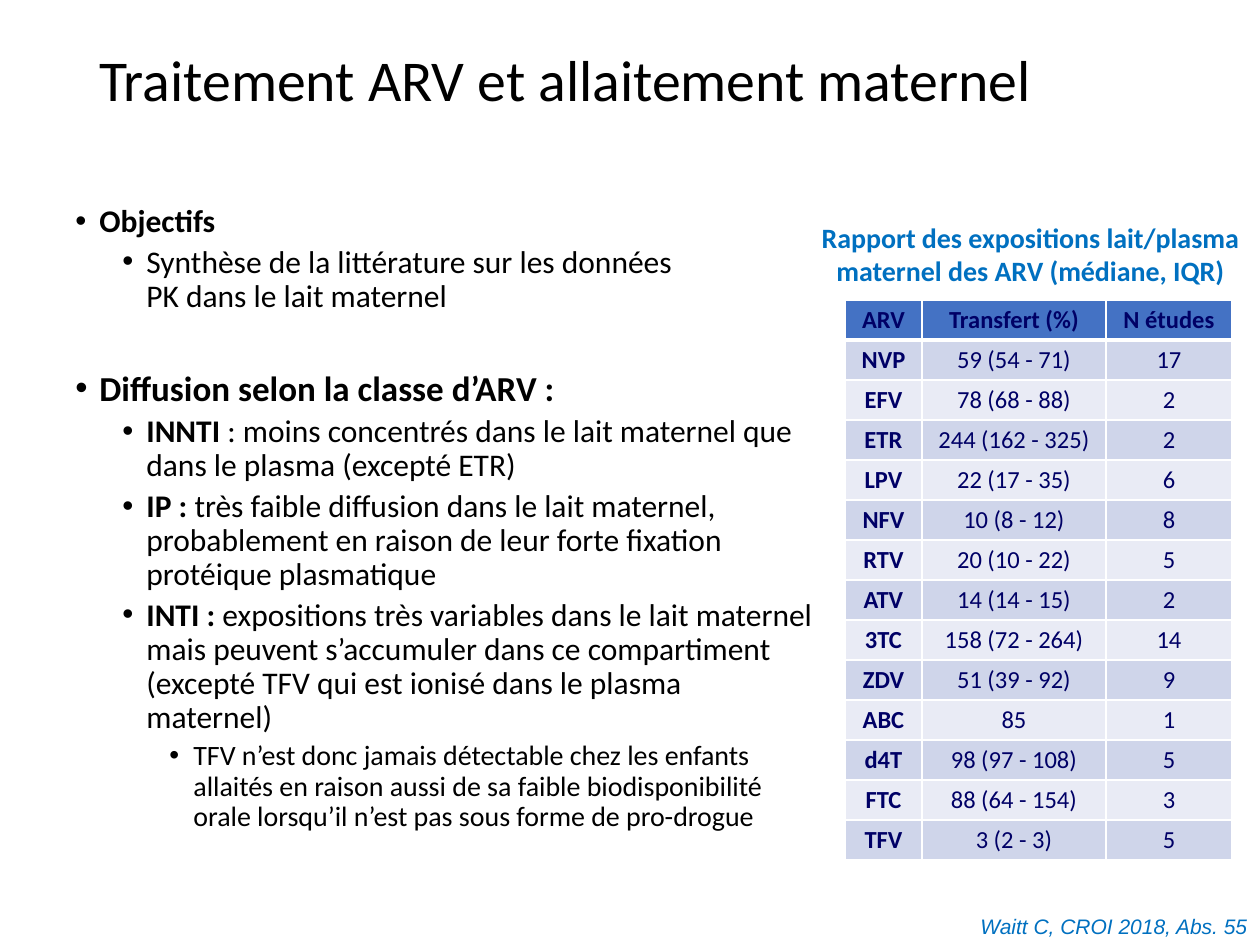
from pptx import Presentation
from pptx.dml.color import RGBColor
from pptx.enum.text import MSO_ANCHOR, PP_ALIGN
from pptx.oxml.ns import qn
from pptx.util import Pt
from lxml.etree import SubElement

BLACK = RGBColor(0x00, 0x00, 0x00)
BLUE = RGBColor(0x00, 0x70, 0xC0)
NAVY = RGBColor(0x00, 0x00, 0x66)
WHITE = RGBColor(0xFF, 0xFF, 0xFF)
HEADER = RGBColor(0x44, 0x72, 0xC4)
BANDS = [RGBColor(0xE9, 0xEB, 0xF5), RGBColor(0xCF, 0xD5, 0xEA)]

TITLE = "Traitement ARV et allaitement maternel"
CAPTION = "Rapport des expositions lait/plasma maternel des ARV (médiane, IQR)"
CREDIT = "Waitt C, CROI 2018, Abs. 55"

# level, size, space before, bold lead, lines
BULLETS = [
    (0, 18, 7.5, "Objectifs", []),
    (1, 18, 3.8, "", ["Synthèse de la littérature sur les données",
                      "PK dans le lait maternel"]),
    (0, 20, 32.6, "Diffusion selon la classe d’ARV :", []),
    (1, 18, 3.8, "INNTI ", [": moins concentrés dans le lait maternel que dans le plasma "
                            "(excepté ETR)"]),
    (1, 18, 3.8, "IP : ", ["très faible diffusion dans le lait maternel, probablement en "
                           "raison de leur forte fixation protéique plasmatique"]),
    (1, 18, 3.8, "INTI : ", ["expositions très variables dans le lait maternel mais peuvent "
                             "s’accumuler dans ce compartiment (excepté TFV qui est ionisé "
                             "dans le plasma maternel)"]),
    (2, 16, 3.8, "", ["TFV n’est donc jamais détectable chez les enfants allaités en raison "
                      "aussi de sa faible biodisponibilité orale lorsqu’il n’est pas sous "
                      "forme de pro-drogue"]),
]

ROWS = [
    ("ARV", "Transfert (%)", "N études"),
    ("NVP", "59 (54 - 71)", "17"),
    ("EFV", "78 (68 - 88)", "2"),
    ("ETR", "244 (162 - 325)", "2"),
    ("LPV", "22 (17 - 35)", "6"),
    ("NFV", "10 (8 - 12)", "8"),
    ("RTV", "20 (10 - 22)", "5"),
    ("ATV", "14 (14 - 15)", "2"),
    ("3TC", "158 (72 - 264)", "14"),
    ("ZDV", "51 (39 - 92)", "9"),
    ("ABC", "85", "1"),
    ("d4T", "98 (97 - 108)", "5"),
    ("FTC", "88 (64 - 154)", "3"),
    ("TFV", "3 (2 - 3)", "5"),
]
COLS = [77, 184, 126]
ROW_H = 40
INDENT, STEP = 24, 47


def px(n):
    return round(n * 914400 / 126)


def style(r, size, color, bold=False, italic=False, font="Calibri"):
    f = r.font
    f.name, f.size, f.bold, f.italic = font, Pt(size), bold, italic
    f.color.rgb = color


def add_box(s, x, y, w, h):
    tf = s.shapes.add_textbox(px(x), px(y), px(w), px(h)).text_frame
    tf.word_wrap = True
    return tf


def add_line(s, box, text, align, *look, **more):
    tf = add_box(s, *box)
    tf.text = text
    p = tf.paragraphs[0]
    p.alignment = align
    style(p.runs[0], *look, **more)
    return tf


def add_bullets(tf):
    for i, (level, size, before, lead, lines) in enumerate(BULLETS):
        p = tf.paragraphs[0] if i == 0 else tf.add_paragraph()
        p.level = level
        p.line_spacing = 0.9
        p.space_before = Pt(before)
        pPr = p._p.get_or_add_pPr()
        pPr.set("marL", str(px(INDENT + STEP * level)))
        pPr.set("indent", str(px(-INDENT)))
        SubElement(pPr, qn("a:buFont"), typeface="Arial")
        SubElement(pPr, qn("a:buChar"), char="•")
        p.text = lead + "\v".join(lines) if not lead else lead
        for r in p.runs:
            style(r, size, BLACK, bold=bool(lead))
        if lead and lines:
            r = p.add_run()
            r.text = lines[0]
            style(r, size, BLACK)


def set_borders(cell, bottom):
    tcPr = cell._tc.get_or_add_tcPr()
    for i, (side, width) in enumerate([("L", 1), ("R", 1), ("T", 1), ("B", bottom)]):
        ln = SubElement(tcPr, qn("a:ln" + side), w=str(Pt(width)))
        fill = SubElement(ln, qn("a:solidFill"))
        SubElement(fill, qn("a:srgbClr"), val=str(WHITE))
        tcPr.insert(i, ln)


def add_ratio_table(s, x, y):
    table = s.shapes.add_table(len(ROWS), len(COLS), px(x), px(y),
                               px(sum(COLS)), px(ROW_H * len(ROWS))).table
    for col, w in zip(table.columns, COLS):
        col.width = px(w)
    for i, row in enumerate(ROWS):
        table.rows[i].height = px(ROW_H)
        for j, text in enumerate(row):
            cell = table.cell(i, j)
            cell.text = text
            cell.vertical_anchor = MSO_ANCHOR.MIDDLE
            cell.margin_left = cell.margin_right = cell.margin_top = px(1)
            cell.margin_bottom = 0
            cell.fill.solid()
            cell.fill.fore_color.rgb = BANDS[i % 2] if i else HEADER
            set_borders(cell, 1 if i else 3)
            p = cell.text_frame.paragraphs[0]
            p.alignment = PP_ALIGN.CENTER
            style(p.runs[0], 14, NAVY, bold=i == 0 or j == 0)


def main():
    prs = Presentation()
    prs.slide_width, prs.slide_height = px(1260), px(945)
    s = prs.slides.add_slide(prs.slide_layouts[6])
    title = add_line(s, (87, 19, 1086, 127), TITLE, PP_ALIGN.LEFT, 33, BLACK)
    title.vertical_anchor = MSO_ANCHOR.MIDDLE
    title.paragraphs[0].line_spacing = 0.9
    add_bullets(add_box(s, 63, 199, 764, 727))
    add_line(s, (873, 907, 387, 38), CREDIT, PP_ALIGN.RIGHT, 12, BLUE,
             italic=True, font="Arial")
    add_line(s, (806, 214, 449, 81), CAPTION, PP_ALIGN.CENTER, 16, BLUE, bold=True)
    add_ratio_table(s, 845, 300)
    prs.save("out.pptx")


if __name__ == "__main__":
    main()
